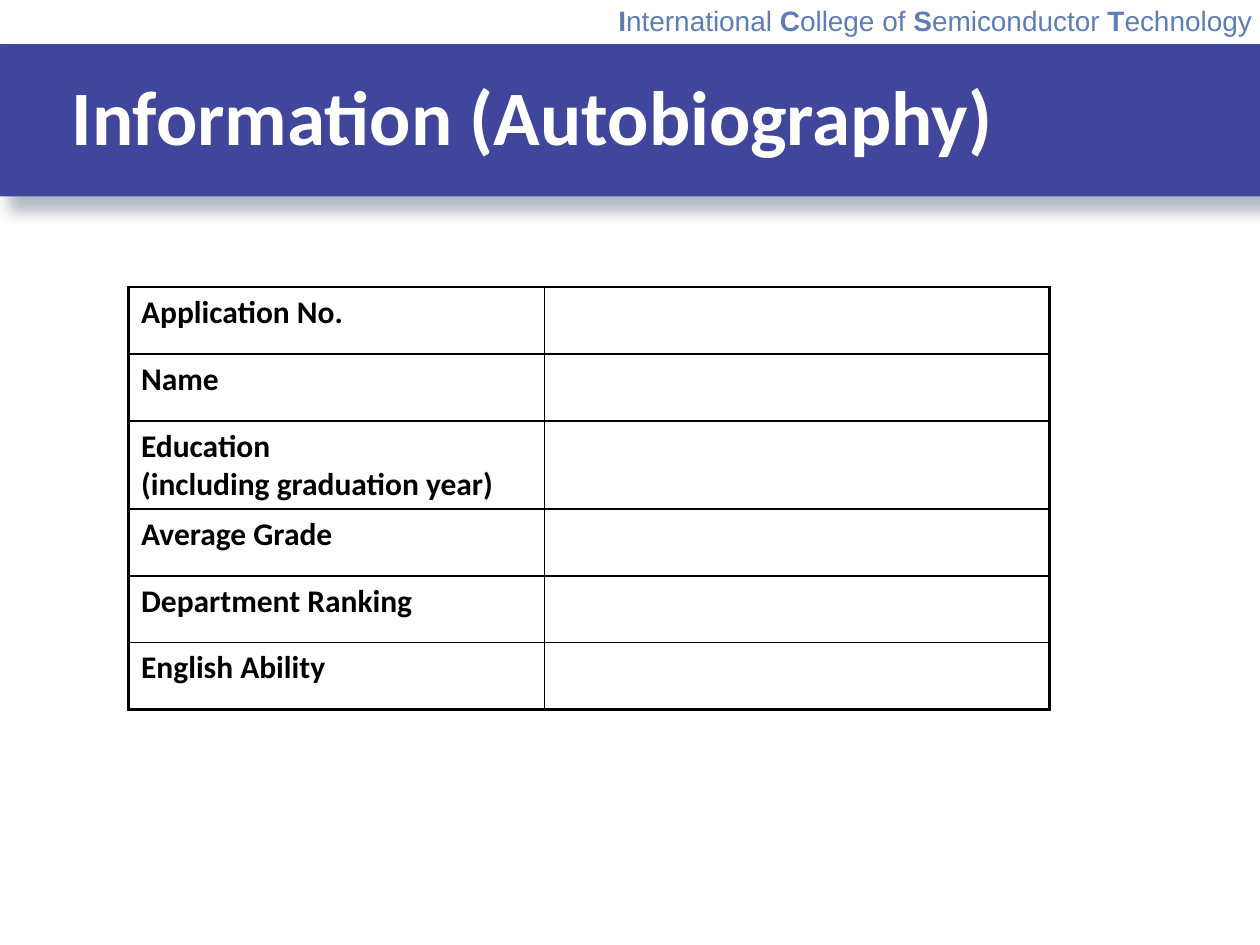
from lxml import etree
from pptx import Presentation
from pptx.dml.color import RGBColor
from pptx.enum.shapes import MSO_SHAPE
from pptx.enum.text import MSO_ANCHOR
from pptx.oxml import parse_xml
from pptx.oxml.ns import nsdecls, qn
from pptx.util import Inches, Pt

RECTANGLE = MSO_SHAPE.RECTANGLE
TOP, MIDDLE = MSO_ANCHOR.TOP, MSO_ANCHOR.MIDDLE

COLLEGE = ["International ", "College of ", "Semiconductor ", "Technology"]
TITLE = "Information (Autobiography)"
FIELDS = [
    ["Application No."],
    ["Name"],
    ["Education", "(including graduation year)"],
    ["Average Grade"],
    ["Department Ranking"],
    ["English Ability"],
]
COLUMN_WIDTHS = [3.3, 4.01]
ROW_HEIGHT = 0.53
OUTER_LINE, INNER_LINE = 1.5, 1
BLUE, PALE_BLUE, WHITE, BLACK = "3F469B", "5E7DB7", "FFFFFF", "000000"
SHADOW_COLOR = "44546A"


def rgb(color):
    return RGBColor.from_string(color)


def write_text(frame, paragraphs, font="Calibri", size=18, color=BLACK,
               anchor=TOP, line_spacing=None):
    """Fill a text frame; each paragraph is a list of (text, bold) runs."""
    frame.word_wrap = True
    frame.vertical_anchor = anchor
    for index, runs in enumerate(paragraphs):
        paragraph = frame.add_paragraph() if index else frame.paragraphs[0]
        paragraph.line_spacing = line_spacing
        for text, bold in runs:
            run = paragraph.add_run()
            run.text = text
            run.font.name = font
            run.font.size = Pt(size)
            run.font.bold = bold
            run.font.color.rgb = rgb(color)


def add_text(slide, left, top, width, height, paragraphs, **text_format):
    box = slide.shapes.add_textbox(
        Inches(left), Inches(top), Inches(width), Inches(height))
    write_text(box.text_frame, paragraphs, **text_format)


def add_banner(slide):
    banner = slide.shapes.add_shape(
        RECTANGLE, Inches(-0.04), Inches(0.35), Inches(10.04), Inches(1.21))
    banner.shadow.inherit = False
    banner.fill.solid()
    banner.fill.fore_color.rgb = rgb(BLUE)
    banner.line.fill.background()
    effects = banner._element.spPr.find(qn("a:effectLst"))
    effects.append(parse_xml(
        f'<a:outerShdw {nsdecls("a")} blurRad="{Pt(8)}" dist="{Pt(11)}" '
        f'dir="{45 * 60000}" algn="tl" rotWithShape="0">'
        f'<a:srgbClr val="{SHADOW_COLOR}"><a:alpha val="40000"/></a:srgbClr>'
        '</a:outerShdw>'))


def set_borders(cell, widths):
    """Draw cell borders from widths in points: left, right, top, bottom."""
    properties = cell._tc.get_or_add_tcPr()
    for position, (side, width) in enumerate(zip("LRTB", widths)):
        line = etree.Element(qn(f"a:ln{side}"), w=str(Pt(width)))
        fill = etree.SubElement(line, qn("a:solidFill"))
        etree.SubElement(fill, qn("a:srgbClr"), val=BLACK)
        properties.insert(position, line)


def add_form(slide, left, top):
    row_count, column_count = len(FIELDS), len(COLUMN_WIDTHS)
    table = slide.shapes.add_table(
        row_count, column_count, Inches(left), Inches(top),
        Inches(sum(COLUMN_WIDTHS)), Inches(ROW_HEIGHT * row_count)).table
    table.first_row = table.horz_banding = False
    for column, width in zip(table.columns, COLUMN_WIDTHS):
        column.width = Inches(width)
    for row_index, field in enumerate(FIELDS):
        table.rows[row_index].height = Inches(ROW_HEIGHT)
        label = table.cell(row_index, 0)
        write_text(label.text_frame, [[(line, True)] for line in field])
        for column_index in range(column_count):
            cell = table.cell(row_index, column_index)
            cell.fill.solid()
            cell.fill.fore_color.rgb = rgb(WHITE)
            on_edge = [column_index == 0, column_index == column_count - 1,
                       row_index == 0, row_index == row_count - 1]
            set_borders(cell, [OUTER_LINE if edge else INNER_LINE
                               for edge in on_edge])


def main():
    presentation = Presentation()
    presentation.slide_width = Inches(10)
    presentation.slide_height = Inches(7.5)
    slide = presentation.slides.add_slide(presentation.slide_layouts[6])
    add_banner(slide)
    college_runs = [run for word in COLLEGE
                    for run in ((word[0], True), (word[1:], False))]
    add_text(slide, 4.81, -0.02, 6.46, 0.37, [college_runs],
             font="Arial", size=16, color=PALE_BLUE)
    add_text(slide, 0.47, 0.37, 8.2, 1.18, [[(TITLE, True)]],
             size=44, color=WHITE, anchor=MIDDLE, line_spacing=0.9)
    add_form(slide, 1.02, 2.28)
    presentation.save("out.pptx")


if __name__ == "__main__":
    main()
